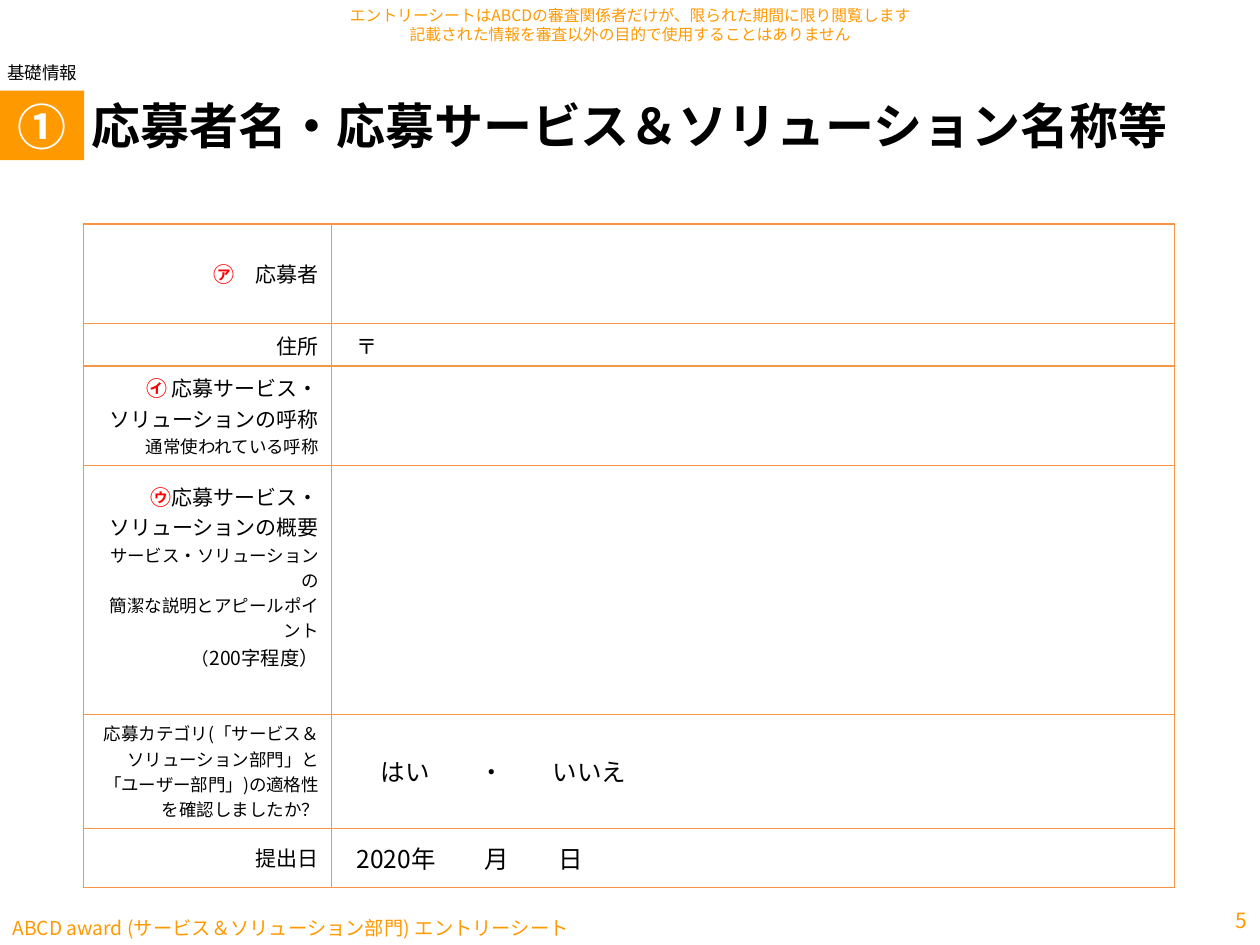
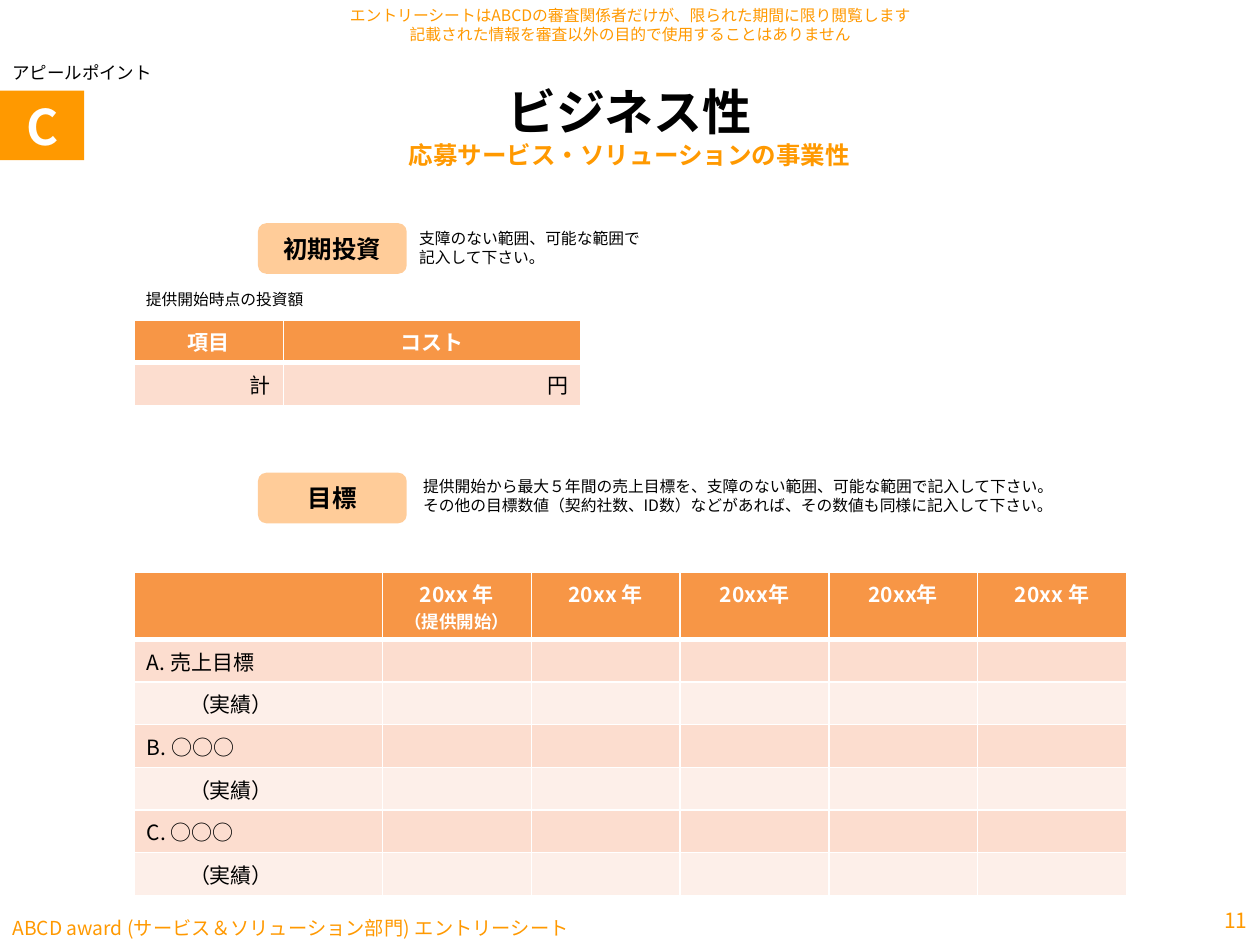
from dataclasses import dataclass
from typing import NamedTuple, Optional

from lxml.etree import SubElement as Sub
from pptx import Presentation
from pptx.dml.color import RGBColor
from pptx.enum.shapes import MSO_SHAPE as Geo
from pptx.enum.text import MSO_ANCHOR as Anchor, PP_ALIGN as Align
from pptx.oxml.ns import qn
from pptx.util import Cm, Pt

FONT = "Noto Sans CJK JP"
ORANGE, PEACH, RED = "FF9900", "FFCC99", "FF0000"
BLACK, WHITE = "000000", "FFFFFF"
HEAD, DARK, PALE = "F79646", "FCDDCF", "FDEFE9"
LEFT, MID, RIGHT = Align.LEFT, Align.CENTER, Align.RIGHT
ROW = 0.86


class Run(NamedTuple):
    text: str
    size: Optional[float] = None
    color: Optional[str] = None
    bold: Optional[bool] = None


class Style(NamedTuple):
    size: float = 12
    color: str = BLACK
    bold: bool = False
    align: Align = LEFT


class Box(NamedTuple):
    left: float
    top: float
    width: float
    height: float


@dataclass
class Label:
    box: Box
    paras: list
    style: Style
    pad: float = 0.25
    anchor: Anchor = Anchor.MIDDLE
    geo: Optional[Geo] = None
    fill: str = WHITE


@dataclass
class Cell:
    runs: list
    style: Style = Style()
    fill: str = WHITE
    pad: float = 0.25
    foot: float = 0.13
    anchor: Anchor = Anchor.TOP
    under: float = 1


@dataclass
class Grid:
    left: float
    top: float
    cols: list
    rows: list
    cells: list
    line: str


def rgb(code: str) -> RGBColor:
    return RGBColor.from_string(code)


def lengths(box: Box) -> list:
    return [Cm(side) for side in box]


def write(par, runs: list, style: Style) -> None:
    par.alignment = style.align
    font = par.font
    font.size = Pt(style.size)
    font.bold = style.bold
    font.color.rgb = rgb(style.color)
    font.name = FONT
    base = par._p.find(qn("a:pPr")).find(qn("a:defRPr"))
    Sub(base, qn("a:ea"), typeface=FONT)
    for item in runs:
        for row, text in enumerate(item.text.split("\n")):
            if row:
                par.add_line_break()
            if not text:
                continue
            run = par.add_run()
            run.text = text
            if item.size:
                run.font.size = Pt(item.size)
            if item.color:
                run.font.color.rgb = rgb(item.color)
            if item.bold is not None:
                run.font.bold = item.bold
    if not runs:
        Sub(par._p, qn("a:endParaRPr"), sz=str(int(style.size * 100)))


def draw_label(slide, item: Label) -> None:
    if item.geo:
        shape = slide.shapes.add_shape(item.geo, *lengths(item.box))
        shape.shadow.inherit = False
        shape.fill.solid()
        shape.fill.fore_color.rgb = rgb(item.fill)
        shape.line.fill.background()
    else:
        shape = slide.shapes.add_textbox(*lengths(item.box))
    frame = shape.text_frame
    frame.word_wrap = True
    frame.margin_left = Cm(item.pad)
    frame.vertical_anchor = item.anchor
    for row, runs in enumerate(item.paras):
        par = frame.add_paragraph() if row else frame.paragraphs[0]
        write(par, runs, item.style)


def edge(cell, color: str, under: float) -> None:
    props = cell._tc.get_or_add_tcPr()
    for spot, side in enumerate("LRTB"):
        width = under if side == "B" else 1
        line = props.makeelement(qn(f"a:ln{side}"), {"w": str(Pt(width))})
        Sub(Sub(line, qn("a:solidFill")), qn("a:srgbClr"), val=color)
        props.insert(spot, line)


def draw_grid(slide, grid: Grid) -> None:
    box = Box(grid.left, grid.top, sum(grid.cols), sum(grid.rows))
    count = len(grid.rows), len(grid.cols)
    table = slide.shapes.add_table(*count, *lengths(box)).table
    table.first_row = table.horz_banding = False
    for col, width in zip(table.columns, grid.cols):
        col.width = Cm(width)
    for row, height in zip(table.rows, grid.rows):
        row.height = Cm(height)
    for y, line in enumerate(grid.cells):
        for x, item in enumerate(line):
            cell = table.cell(y, x)
            cell.margin_left = Cm(item.pad)
            cell.margin_bottom = Cm(item.foot)
            cell.vertical_anchor = item.anchor
            cell.fill.solid()
            cell.fill.fore_color.rgb = rgb(item.fill)
            edge(cell, grid.line, item.under)
            write(cell.text_frame.paragraphs[0], item.runs, item.style)


def add_page(deck, mark: str, topic: str, pad: float, title: list, number: int):
    slide = deck.slides.add_slide(deck.slide_layouts[6])
    foot = "ABCD award (サービス＆ソリューション部門) エントリーシート"
    note = ("エントリーシートはABCDの審査関係者だけが、限られた期間に限り閲覧します\n"
            "記載された情報を審査以外の目的で使用することはありません")
    labels = [
        Label(Box(0, 18.36, 14, 0.69), [[Run(foot)]], Style(11, ORANGE)),
        Label(Box(4.7, 0, 16, 0.99), [[Run(note)]],
              Style(9, ORANGE, align=MID), anchor=Anchor.TOP),
        Label(Box(0.69, 1.52, 24, 2.01), [title], Style(28, bold=True, align=MID)),
        Label(Box(0, 1.83, 1.7, 1.4), [[Run(mark)]],
              Style(28, WHITE, True, MID), geo=Geo.RECTANGLE, fill=ORANGE),
        Label(Box(0, 1.12, 4, 0.53), [[Run(topic)]], Style(10),
              pad=pad, anchor=Anchor.TOP),
        Label(Box(23.55, 18.03, 1.85, 1.02), [[Run(str(number))]],
              Style(12, ORANGE, align=RIGHT)),
    ]
    for item in labels:
        draw_label(slide, item)
    return slide


def entry_page(deck) -> None:
    title = [Run("応募者名・応募サービス＆ソリューション名称等")]
    slide = add_page(deck, "①", "基礎情報", 0.15, title, 5)

    def sign(text: str) -> Run:
        return Run(text, color=RED, bold=True)

    fields = [
        ([sign("㋐"), Run("　応募者")], "", 12, 0.51, 0.13),
        ([Run("住所")], "〒", 12, 0.51, 0.13),
        ([sign("㋑ "), Run("応募サービス・\nソリューションの呼称\n"),
          Run("通常使われている呼称", 10)], "", 12, 0.51, 0.13),
        ([sign("㋒"), Run("応募サービス・\nソリューションの概要\n"),
          Run("サービス・ソリューションの\n簡潔な説明とアピールポイント\n（", 10),
          Run("200字程度）", 11)], "", 12, 0.51, 0.69),
        ([Run("応募カテゴリ(「サービス＆ソリューション部門」と"
              "「ユーザー部門」)の適格性を確認しましたか？", 10)],
         "はい　　・　　いいえ", 14, 1, 0.13),
        ([Run("提出日")], "2020年　　月　　日", 14, 0.51, 0.13),
    ]
    cells = [[Cell(name, Style(align=RIGHT), foot=foot, anchor=Anchor.MIDDLE),
              Cell([Run(value)] if value else [], Style(size), pad=pad,
                   anchor=Anchor.MIDDLE)]
             for name, value, size, pad, foot in fields]
    draw_grid(slide, Grid(1.68, 4.52, [5, 17], [2, ROW, 2, 5.02, 2.3, 1.19],
                          cells, HEAD))


def header(*runs: Run) -> Cell:
    return Cell(list(runs), Style(12, WHITE, True, MID), HEAD, under=3)


def goal_row(text: str, fill: str, pad: float) -> list:
    return [Cell([Run(text)], fill=fill, pad=pad)] + [Cell([], fill=fill)] * 5


def business_page(deck) -> None:
    title = [Run("ビジネス性\n"), Run("応募サービス・ソリューションの事業性", 14, ORANGE)]
    slide = add_page(deck, "C", "アピールポイント", 0.25, title, 11)
    for text, top in (("初期投資", 4.5), ("目標", 9.53)):
        draw_label(slide, Label(Box(5.2, top, 3, 1.02), [[Run(text)]],
                                Style(14, bold=True, align=MID),
                                geo=Geo.FLOWCHART_ALTERNATE_PROCESS, fill=PEACH))
    notes = [
        (Box(2.69, 5.54, 4.01, 0.99), ["提供開始時点の投資額"]),
        (Box(8.2, 4.5, 5.31, 0.97), ["支障のない範囲、可能な範囲で", "記入して下さい。"]),
        (Box(8.28, 9.5, 14.43, 0.97),
         ["提供開始から最大５年間の売上目標を、支障のない範囲、可能な範囲で記入して下さい。",
          "その他の目標数値（契約社数、ID数）などがあれば、その数値も同様に記入して下さい。"]),
    ]
    for box, lines in notes:
        draw_label(slide, Label(box, [[Run(line)] for line in lines], Style(9)))
    costs = [[header(Run("項目")), header(Run("コスト"))],
             [Cell([Run(text)], Style(align=RIGHT), DARK) for text in ("計", "円")]]
    draw_grid(slide, Grid(2.71, 6.45, [3, 6], [ROW] * 2, costs, WHITE))
    years = [header(Run(text)) for text in ("20xx 年", "20xx年", "20xx年", "20xx 年")]
    goals = [[header(), header(Run("20xx 年\n"), Run("（提供開始）", 10)), *years]]
    for text in ("A. 売上目標", "B. ○○○", "C. ○○○"):
        goals += [goal_row(text, DARK, 0.25), goal_row("（実績）", PALE, 1.1)]
    draw_grid(slide, Grid(2.71, 11.53, [5] + [3] * 5, [1.36] + [ROW] * 6, goals, WHITE))


def main() -> None:
    deck = Presentation()
    deck.slide_width, deck.slide_height = Cm(25.4), Cm(19.05)
    entry_page(deck)
    business_page(deck)
    deck.save("out.pptx")


if __name__ == "__main__":
    main()
